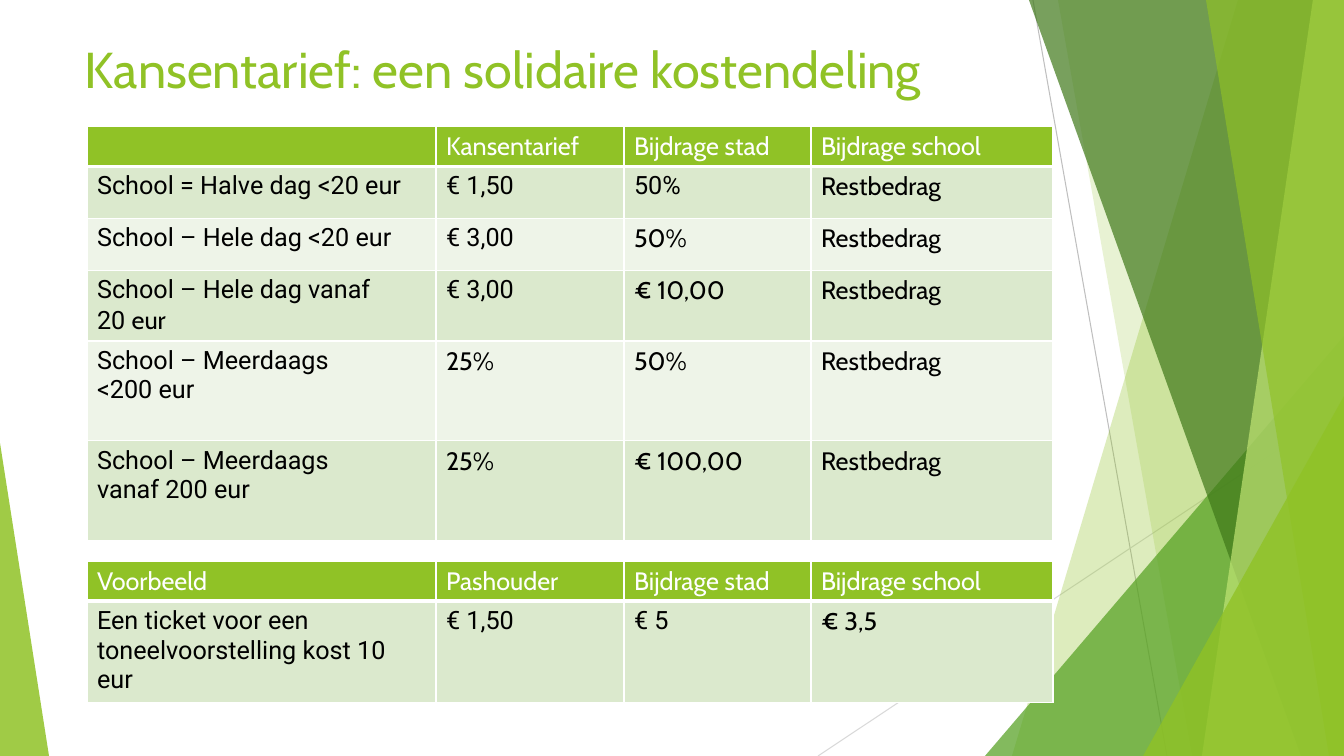
from lxml.etree import SubElement
from pptx import Presentation
from pptx.dml.color import RGBColor
from pptx.enum.shapes import MSO_CONNECTOR, MSO_SHAPE
from pptx.enum.text import MSO_ANCHOR
from pptx.oxml import parse_xml
from pptx.oxml.ns import nsdecls, qn
from pptx.util import Pt

SCALE = 914400 / 100.8  # EMU in one px
WIDTH, HEIGHT = 1344, 756
GREEN, LEAF, FOREST, LIME = "90C226", "54A021", "3F7819", "C0E474"
WHITE, BLACK = "FFFFFF", "000000"
BANDS = ("DBE9CD", "EEF4E8")
FONTS = {"C": "Cabin", "R": "Roboto"}
COLUMNS = (349, 188, 187, 242)


def emu(px):
    return round(px * SCALE)


def color(value):
    return RGBColor.from_string(value)


class Page:
    """Holds the current slide and draws its elements in one style."""

    def __init__(self, deck):
        self.shapes = deck.slides.add_slide(deck.slide_layouts[6]).shapes

    def paint(self, shape, fill, opacity):
        shape.shadow.inherit = False
        shape.fill.solid()
        shape.fill.fore_color.rgb = color(fill)
        shape.line.fill.background()
        tint = shape._element.spPr.find(qn("a:solidFill"))[0]
        SubElement(tint, qn("a:alpha"), val=str(opacity * 1000))

    def line(self, start, end, stroke):
        line = self.shapes.add_connector(
            MSO_CONNECTOR.STRAIGHT, *map(emu, start + end))
        line.line.color.rgb = color(stroke)
        line.line.width = Pt(0.75)
        SubElement(line._element.spPr, qn("a:effectLst"))

    def band(self, top, bottom, fill, opacity):
        """Area from a slanted left edge to the right edge of the slide."""
        builder = self.shapes.build_freeform(top, 0, scale=SCALE)
        builder.add_line_segments(
            [(WIDTH, 0), (WIDTH, HEIGHT), (bottom, HEIGHT)], close=True)
        self.paint(builder.convert_to_shape(), fill, opacity)

    def triangle(self, left, top, width, apex, fill, opacity):
        """Triangle that stands on the bottom edge of the slide."""
        shape = self.shapes.add_shape(
            MSO_SHAPE.ISOSCELES_TRIANGLE,
            *map(emu, (left, top, width, HEIGHT - top)))
        shape.adjustments[0] = apex
        self.paint(shape, fill, opacity)

    def style(self, span, font, size, ink):
        span.font.name = font
        span.font.size = Pt(size)
        span.font.bold = False
        span.font.color.rgb = color(ink)

    def title(self, text, left, top, width, height):
        box = self.shapes.add_textbox(*map(emu, (left, top, width, height)))
        frame = box.text_frame
        frame.word_wrap = True
        frame.vertical_anchor = MSO_ANCHOR.TOP
        frame.text = text
        self.style(frame.paragraphs[0].runs[0], "Cabin", 36, GREEN)

    def cell(self, cell, text, font, ink, fill, bottom):
        """Fill one cell; a bar in the text switches to Cabin."""
        cell.fill.solid()
        cell.fill.fore_color.rgb = color(fill)
        sides = (("L", 1), ("R", 1), ("T", 1), ("B", bottom))
        for index, (side, width) in enumerate(sides):
            border = parse_xml(
                f'<a:ln{side} {nsdecls("a")} w="{Pt(width)}"><a:solidFill>'
                f'<a:srgbClr val="{WHITE}"/></a:solidFill></a:ln{side}>')
            cell._tc.get_or_add_tcPr().insert(index, border)
        frame = cell.text_frame
        frame.text = text.replace("|", "")
        for para, line in zip(frame.paragraphs, text.split("\n")):
            head, bar, tail = line.partition("|")
            for span in para.runs:
                span.text = head
                self.style(span, font, 18, ink)
            if bar:
                span = para.add_run()
                span.text = tail
                self.style(span, "Cabin", 18, ink)

    def table(self, left, top, heights, header, rows):
        frame = self.shapes.add_table(
            len(heights), len(COLUMNS),
            *map(emu, (left, top, sum(COLUMNS), sum(heights))))
        table = frame.table
        table.horz_banding = False
        for column, width in zip(table.columns, COLUMNS):
            column.width = emu(width)
        for row, height in zip(table.rows, heights):
            row.height = emu(height)
        for index, text in enumerate(header):
            self.cell(table.cell(0, index), text, "Cabin", WHITE, GREEN, 3)
        for number, (fonts, *texts) in enumerate(rows, 1):
            fill = BANDS[(number - 1) % 2]
            for index, (key, text) in enumerate(zip(fonts, texts)):
                self.cell(table.cell(number, index), text, FONTS[key],
                          BLACK, fill, 1)


def main():
    deck = Presentation()
    deck.slide_width, deck.slide_height = emu(WIDTH), emu(HEIGHT)
    page = Page(deck)

    # Background facets, from back to front
    page.line((1033, 0), (1167, HEIGHT), "BFBFBF")
    page.line((WIDTH, 406), (818, HEIGHT), "D9D9D9")
    page.band(1238, 1012, GREEN, 30)
    page.band(1058, 1192, GREEN, 20)
    page.triangle(985, 336, 359, 1, LEAF, 72)
    page.band(1029, 1301, FOREST, 70)
    page.band(1313, 1202, LIME, 70)
    page.band(1206, 1329, GREEN, 65)
    page.triangle(1143, 396, 201, 1, GREEN, 80)
    page.triangle(0, 443, 49, 0, GREEN, 85)

    page.title("Kansentarief: een solidaire kostendeling", 75, 33, 948, 145)

    # Rates; the first item of a row gives the font of each cell
    rest = "Restbedrag"
    page.table(
        87, 126, (40, 52, 52, 70, 100, 100),
        ("", "Kansentarief", "Bijdrage stad", "Bijdrage school"),
        (("RRRC", "School = Halve dag <20 eur", "€ 1,50", "50%", rest),
         ("RRCC", "School – Hele dag <20 eur", "€ 3,00", "50%", rest),
         ("RRCC", "School – Hele dag vanaf\n20 |eur", "€ 3,00", "€ 10,00",
          rest),
         ("RCCC", "School – Meerdaags\n<200 eur", "25%", "50%", rest),
         ("RCCC", "School – Meerdaags\nvanaf 200 eur", "25%", "€ 100,00",
          rest)))

    # Worked example
    page.table(
        87, 561, (40, 99),
        ("Voorbeeld", "Pashouder", "Bijdrage stad", "Bijdrage school"),
        (("RRRC", "Een ticket voor een toneelvoorstelling kost 10 eur",
          "€ 1,50", "€ 5", "€ 3,5"),))

    deck.save("out.pptx")


if __name__ == "__main__":
    main()
